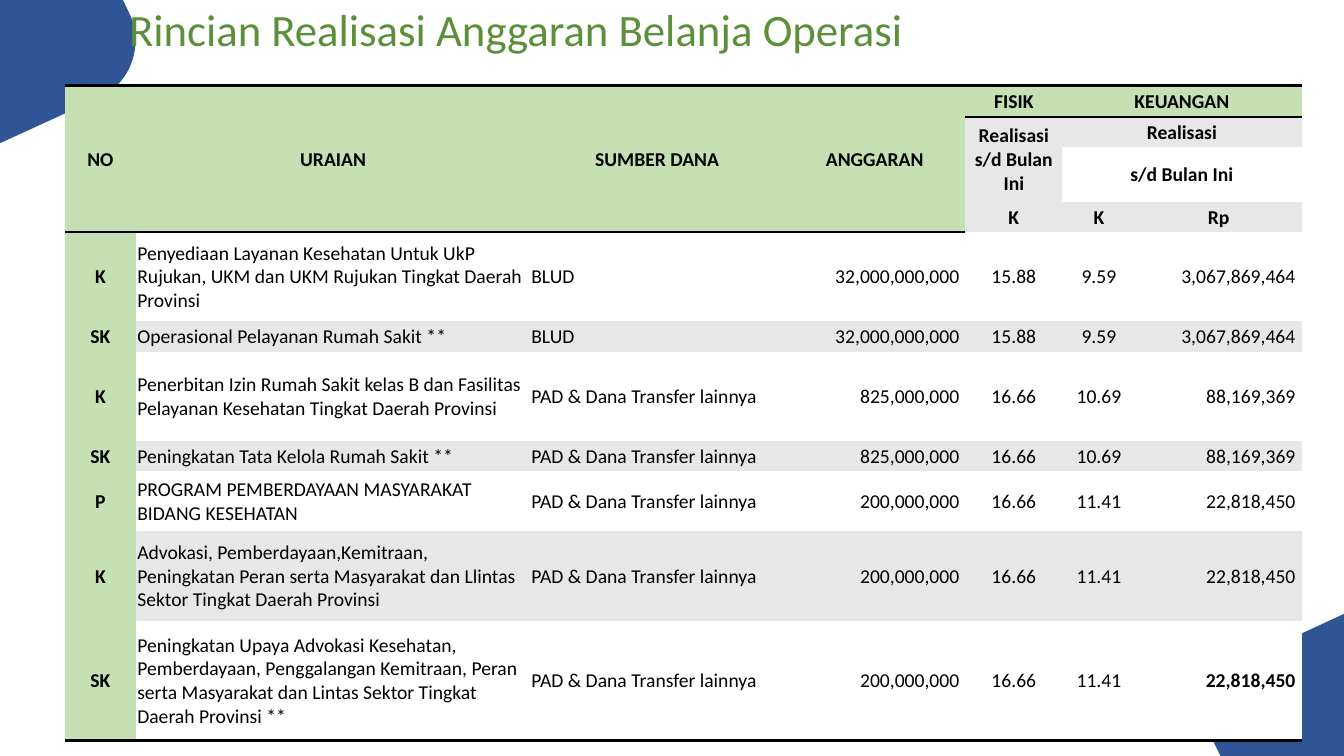
from lxml import etree
from pptx import Presentation
from pptx import util as u
from pptx.dml.color import RGBColor
from pptx.enum import shapes, text
from pptx.oxml.ns import qn

BLUE = RGBColor(0x2F, 0x55, 0x97)
TITLE_GREEN = RGBColor(0x5C, 0x8F, 0x3A)
GREEN = RGBColor(0xC5, 0xE0, 0xB3)
GREY = RGBColor(0xE7, 0xE7, 0xE7)
WHITE = RGBColor(0xFF, 0xFF, 0xFF)
BLACK = RGBColor(0, 0, 0)
LEFT, CENTER, RIGHT = text.PP_ALIGN.LEFT, text.PP_ALIGN.CENTER, text.PP_ALIGN.RIGHT
NO_STYLE_NO_GRID = "{2D5ABB26-0587-4C30-8999-92F81FD0307C}"


def write(frame, content, size=14, color=BLACK, bold=False, align=CENTER, spacing=1.0):
    paragraph = frame.paragraphs[0]
    paragraph.alignment = align
    paragraph.line_spacing = spacing
    run = paragraph.add_run()
    run.text = content
    run.font.name = "Calibri"
    run.font.size = u.Pt(size)
    run.font.bold = bold
    run.font.color.rgb = color


def add_border(cell, side):
    """Put a 2 pt black border on a cell; side is lnT or lnB."""
    border = etree.Element(qn("a:" + side), w=str(u.Pt(2)))
    fill = etree.SubElement(border, qn("a:solidFill"))
    etree.SubElement(fill, qn("a:srgbClr"), val=str(BLACK))
    cell._tc.get_or_add_tcPr().insert(0, border)


presentation = Presentation()
presentation.slide_width = u.Cm(33.87)
presentation.slide_height = u.Cm(19.05)
slide = presentation.slides.add_slide(presentation.slide_layouts[5])

# Corner ornaments: points before the rounded corner, its Bezier curve, the end point
ornaments = [
    ([(33.87, 19.05), (30.76, 19.05)],
     [(30.58, 18.69), (30.23, 17.93), (30.56, 16.99), (31.34, 16.64)], (33.87, 15.47)),
    ([(0, 0), (3.1, 0)],
     [(3.28, 0.38), (3.63, 1.17), (3.28, 2.11), (2.51, 2.46)], (0, 3.61)),
]
STEPS = 24
for start, curve, end in ornaments:
    rounded = []
    for step in range(STEPS + 1):
        t = step / STEPS
        weights = ((1 - t) ** 3, 3 * t * (1 - t) ** 2, 3 * t ** 2 * (1 - t), t ** 3)
        rounded.append([sum(w * point[axis] for w, point in zip(weights, curve))
                        for axis in (0, 1)])
    points = [(u.Cm(x), u.Cm(y)) for x, y in start + rounded + [end]]
    builder = slide.shapes.build_freeform(*points[0], scale=1.0)
    builder.add_line_segments(points[1:], close=True)
    ornament = builder.convert_to_shape()
    ornament.shadow.inherit = False
    ornament.fill.solid()
    ornament.fill.fore_color.rgb = BLUE
    ornament.line.fill.background()

# Line under the title
underline = slide.shapes.add_connector(
    shapes.MSO_CONNECTOR.STRAIGHT, u.Cm(3.78), u.Cm(2.16), u.Cm(10.69), u.Cm(2.16))
underline.line.color.rgb = BLUE
underline.line.width = u.Pt(3)
etree.SubElement(underline.element.spPr, qn("a:effectLst"))

# Title, in front of the ornaments
title = slide.shapes.title
title.left, title.top, title.width, title.height = (
    u.Cm(2.67), u.Cm(-0.33), u.Cm(20.68), u.Cm(1.88))
title.text_frame.vertical_anchor = text.MSO_ANCHOR.BOTTOM
title.text_frame.auto_size = text.MSO_AUTO_SIZE.NONE
write(title.text_frame, "Rincian Realisasi Anggaran Belanja Operasi",
      size=32, color=TITLE_GREEN, spacing=0.9)
underline.element.addnext(title.element)

# Table contents
OTHER_FUNDS = "PAD & Dana Transfer lainnya"
header = [
    ["NO", "URAIAN", "SUMBER DANA", "ANGGARAN", "FISIK", "KEUANGAN", ""],
    ["", "", "", "", "Realisasi s/d Bulan Ini", "Realisasi", ""],
    ["", "", "", "", "", "s/d Bulan Ini", ""],
    ["", "", "", "", "K", "K", "Rp"],
]
body = [
    ["K", "Penyediaan Layanan Kesehatan Untuk UkP Rujukan, UKM dan UKM Rujukan "
     "Tingkat Daerah Provinsi", "BLUD", "32,000,000,000", "15.88", "9.59", "3,067,869,464"],
    ["SK", "Operasional Pelayanan Rumah Sakit **",
     "BLUD", "32,000,000,000", "15.88", "9.59", "3,067,869,464"],
    ["K", "Penerbitan Izin Rumah Sakit kelas B dan Fasilitas Pelayanan Kesehatan "
     "Tingkat Daerah Provinsi", OTHER_FUNDS, "825,000,000", "16.66", "10.69", "88,169,369"],
    ["SK", "Peningkatan Tata Kelola Rumah Sakit **",
     OTHER_FUNDS, "825,000,000", "16.66", "10.69", "88,169,369"],
    ["P", "PROGRAM PEMBERDAYAAN MASYARAKAT BIDANG KESEHATAN",
     OTHER_FUNDS, "200,000,000", "16.66", "11.41", "22,818,450"],
    ["K", "Advokasi, Pemberdayaan,Kemitraan, Peningkatan Peran serta Masyarakat dan "
     "Llintas Sektor Tingkat Daerah Provinsi",
     OTHER_FUNDS, "200,000,000", "16.66", "11.41", "22,818,450"],
    ["SK", "Peningkatan Upaya Advokasi Kesehatan, Pemberdayaan, Penggalangan Kemitraan, "
     "Peran serta Masyarakat dan Lintas Sektor Tingkat Daerah Provinsi **",
     OTHER_FUNDS, "200,000,000", "16.66", "11.41", "22,818,450"],
]
rows = header + body
column_widths = [1.8, 9.93, 6.4, 4.57, 2.44, 1.85, 4.18]
row_heights = [0.79, 0.76, 1.37, 0.76, 2.26, 0.76, 2.26, 0.76, 1.5, 2.26, 3.02]
body_aligns = [CENTER, LEFT, LEFT, RIGHT, CENTER, CENTER, RIGHT]
last_row, last_column = len(rows) - 1, len(column_widths) - 1

# Table frame and grid
table_frame = slide.shapes.add_table(
    len(rows), len(column_widths), u.Cm(1.63), u.Cm(2.16),
    u.Cm(sum(column_widths)), u.Cm(sum(row_heights)))
table_frame.element.xpath(".//a:tableStyleId")[0].text = NO_STYLE_NO_GRID
table = table_frame.table
table.first_row = table.horz_banding = False
for column, width in zip(table.columns, column_widths):
    column.width = u.Cm(width)
for row, height in zip(table.rows, row_heights):
    row.height = u.Cm(height)

# Cell text, fills and borders
for r, values in enumerate(rows):
    in_header = r < len(header)
    for c, value in enumerate(values):
        cell = table.cell(r, c)
        align = CENTER if in_header else body_aligns[c]
        cell.vertical_anchor = text.MSO_ANCHOR.MIDDLE
        cell.margin_left = cell.margin_top = u.Cm(0.03)
        cell.margin_right = u.Cm(0.15 if align == RIGHT else 0.03)
        cell.margin_bottom = 0
        is_bold = in_header or c == 0 or (r, c) == (last_row, last_column)
        if value:
            write(cell.text_frame, value, bold=is_bold, align=align)
        else:
            cell.text_frame.paragraphs[0].font.size = u.Pt(14)
        cell.fill.solid()
        if r == 0 or c == 0 or (in_header and c < 4):
            cell.fill.fore_color.rgb = GREEN
        else:
            cell.fill.fore_color.rgb = GREY if r % 2 else WHITE
        if r in (0, last_row) or (r == 3 and c < 4):
            add_border(cell, "lnB")
        if r == 0:
            add_border(cell, "lnT")

# Merged header cells: first row, first column, last row, last column
merges = [(0, c, 3, c) for c in range(4)]
merges += [(r, 5, r, 6) for r in range(3)] + [(1, 4, 2, 4)]
for top, left, bottom, right in merges:
    table.cell(top, left).merge(table.cell(bottom, right))

presentation.save("out.pptx")
